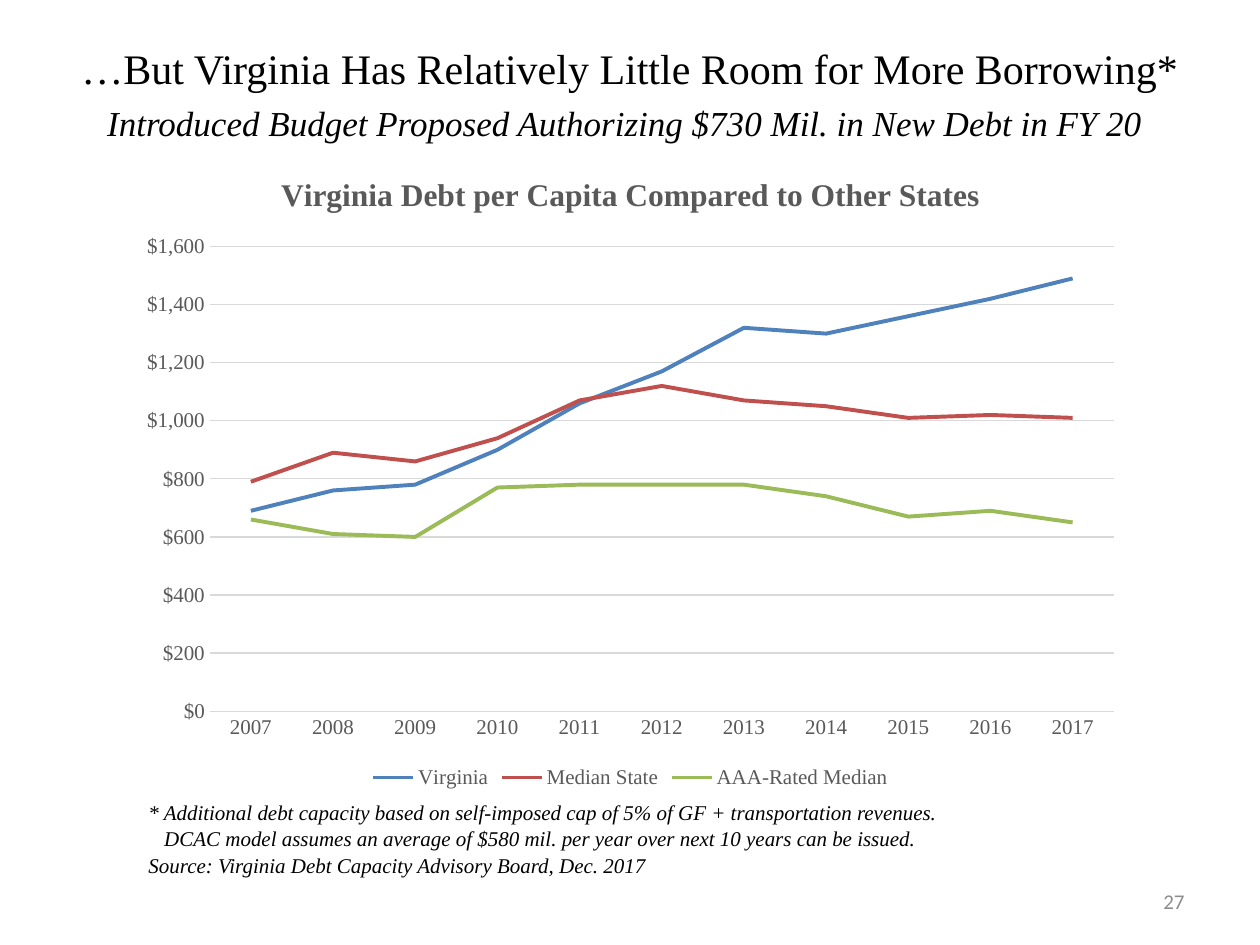
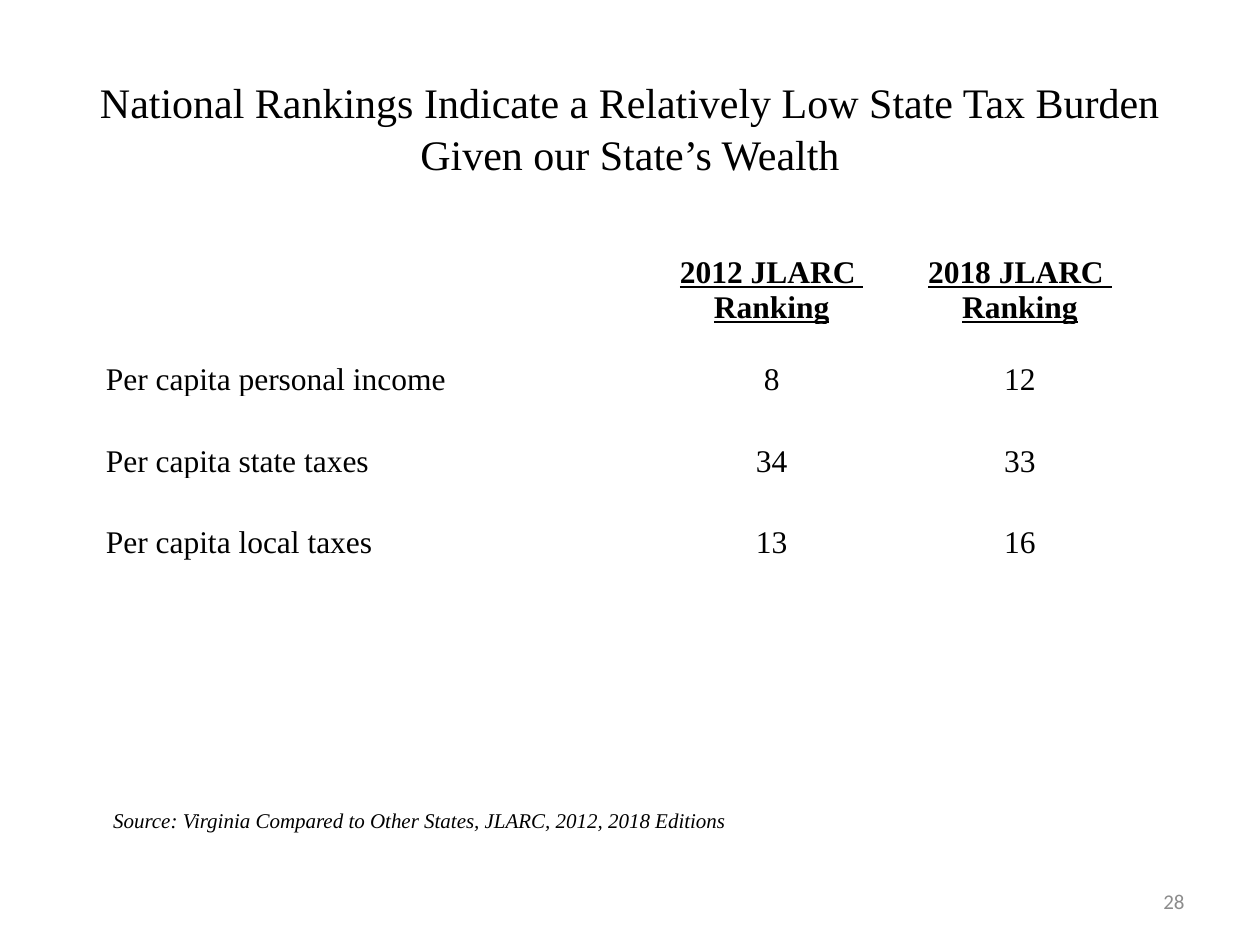
from dataclasses import dataclass
from lxml.etree import SubElement
from pptx import Presentation
from pptx.chart.data import CategoryChartData
from pptx.dml.color import RGBColor
from pptx.enum.chart import XL_CHART_TYPE, XL_LEGEND_POSITION, XL_TICK_MARK
from pptx.enum.text import MSO_ANCHOR, PP_ALIGN
from pptx.oxml.ns import qn
from pptx.util import Inches, Pt


@dataclass(frozen=True)
class Theme:
    serif: str = "Times New Roman"
    sans: str = "Calibri"
    ink: str = "000000"
    chart_ink: str = "595959"
    page_ink: str = "8C8C8C"
    rule: str = "D9D9D9"
    series: tuple = ("4F81BD", "C0504D", "9BBB59")
    title: int = 24
    subtitle: int = 20
    body: int = 18
    small: int = 12
    leading: float = 1.04


COLUMNS, ROWS = 100, 75
PLOT_SHARES = {"x": 0.082, "y": 0.15, "w": 0.898, "h": 0.722}


def apply(target, formats):
    for name, value in formats.items():
        setattr(target, name, value)


class Deck:
    def __init__(self, theme):
        self.theme = theme
        self.deck = Presentation()
        apply(self.deck, {"slide_width": Inches(10), "slide_height": Inches(7.5)})
        self.slide = None

    def across(self, columns):
        return round(self.deck.slide_width * columns / COLUMNS)

    def down(self, rows):
        return round(self.deck.slide_height * rows / ROWS)

    def place(self, left, top, width, height):
        return self.across(left), self.down(top), self.across(width), self.down(height)

    def font(self, font, size, color=None, face=None, **formats):
        base = {"size": Pt(size), "name": face or self.theme.serif}
        apply(font, base | formats)
        font.color.rgb = RGBColor.from_string(color or self.theme.ink)

    def line(self, line, color, width):
        line.color.rgb = RGBColor.from_string(color)
        line.width = Pt(width)

    def new_slide(self, page):
        self.slide = self.deck.slides.add_slide(self.deck.slide_layouts[6])
        number = {"size": self.theme.small, "color": self.theme.page_ink,
                  "face": self.theme.sans}
        self.text((71.7, 69.5, 23.3, 4), [[(page, number)]],
                  PP_ALIGN.RIGHT, MSO_ANCHOR.MIDDLE)

    def text(self, area, paragraphs, align=PP_ALIGN.LEFT, anchor=MSO_ANCHOR.TOP):
        frame = self.slide.shapes.add_textbox(*self.place(*area)).text_frame
        apply(frame, {"word_wrap": True, "vertical_anchor": anchor})
        for index, runs in enumerate(paragraphs):
            paragraph = frame.add_paragraph() if index else frame.paragraphs[0]
            apply(paragraph, {"alignment": align, "line_spacing": self.theme.leading})
            for words, style in runs:
                run = paragraph.add_run()
                run.text = words
                self.font(run.font, **style)
        return frame

    def title(self, area, headline, subtitle=None):
        large = {"size": self.theme.title}
        paragraphs = [[(headline, large)]]
        if subtitle:
            small = {"size": self.theme.subtitle, "italic": True}
            paragraphs.append([(subtitle, small), (" ", large)])
        self.text(area, paragraphs, PP_ALIGN.CENTER)

    def note(self, area, lines, indented=()):
        style = {"size": self.theme.small, "italic": True}
        frame = self.text(area, [[(words, style)] for words in lines])
        for index in indented:
            properties = frame.paragraphs[index]._p.get_or_add_pPr()
            properties.set("marL", str(self.across(1.25)))

    def line_chart(self, area, heading, years, debt):
        data = CategoryChartData(number_format='"$"#,##0')
        data.categories = years
        for name, values in debt.items():
            data.add_series(name, values)
        chart = self.slide.shapes.add_chart(
            XL_CHART_TYPE.LINE, *self.place(*area), data).chart
        label = {"size": self.theme.small, "color": self.theme.chart_ink}
        self.font(chart.font, self.theme.small)
        apply(chart, {"has_title": True, "has_legend": True})
        run = chart.chart_title.text_frame.paragraphs[0].add_run()
        run.text = heading
        self.font(run.font, self.theme.body, self.theme.chart_ink, bold=True)
        apply(chart.legend, {"position": XL_LEGEND_POSITION.BOTTOM,
                             "include_in_layout": False})
        self.font(chart.legend.font, **label)
        for axis in (chart.category_axis, chart.value_axis):
            apply(axis, {"major_tick_mark": XL_TICK_MARK.NONE,
                         "minor_tick_mark": XL_TICK_MARK.NONE})
            self.font(axis.tick_labels.font, **label)
        self.line(chart.category_axis.format.line, self.theme.rule, 0.75)
        dollars = chart.value_axis
        apply(dollars, {"minimum_scale": 0, "maximum_scale": 1600, "major_unit": 200})
        apply(dollars.tick_labels, {"number_format": '"$"#,##0',
                                    "number_format_is_linked": False})
        dollars.format.line.fill.background()
        self.line(dollars.major_gridlines.format.line, self.theme.rule, 0.75)
        chart.plots[0].vary_by_categories = False
        for series, color in zip(chart.plots[0].series, self.theme.series):
            series.smooth = False
            self.line(series.format.line, color, 2.25)
        self.fix_plot(chart)

    def fix_plot(self, chart):
        plot = chart._chartSpace.find(".//" + qn("c:plotArea"))
        for automatic in plot.findall(qn("c:layout")):
            plot.remove(automatic)
        layout = SubElement(plot, qn("c:layout"))
        plot.insert(0, layout)
        manual = SubElement(layout, qn("c:manualLayout"))
        settings = {"layoutTarget": "inner", "xMode": "edge", "yMode": "edge"}
        for name, value in (settings | PLOT_SHARES).items():
            SubElement(manual, qn(f"c:{name}")).set("val", str(value))

    def table(self, area, widths, heights, rows):
        table = self.slide.shapes.add_table(
            len(heights), len(widths), *self.place(*area)).table
        apply(table, {"first_row": False, "horz_banding": False})
        for column, width in zip(table.columns, widths):
            column.width = self.across(width)
        for row, height in zip(table.rows, heights):
            row.height = self.down(height)
        for cell in table.iter_cells():
            cell.fill.background()
            apply(cell, {"vertical_anchor": MSO_ANCHOR.BOTTOM, "margin_bottom": 0,
                         "margin_left": Inches(0.01), "margin_right": Inches(0.01),
                         "margin_top": Inches(0.01)})
        for row_index, row in enumerate(rows):
            emphasis = {"bold": row_index == 0, "underline": row_index == 0}
            for column_index, lines in enumerate(row):
                paragraph = table.cell(row_index, column_index).text_frame.paragraphs[0]
                paragraph.alignment = PP_ALIGN.CENTER if column_index else PP_ALIGN.LEFT
                for line_index, words in enumerate(lines):
                    if line_index:
                        paragraph.add_line_break()
                    run = paragraph.add_run()
                    run.text = words
                    self.font(run.font, self.theme.body, **emphasis)


def debt_slide(deck):
    deck.new_slide("27")
    deck.title((5, 2.7, 90, 7),
               "…But Virginia Has Relatively Little Room for More Borrowing*",
               "Introduced Budget Proposed Authorizing $730 Mil. in New Debt in FY 20")
    deck.note((10.8, 62.9, 82.2, 9.1), [
        "* Additional debt capacity based on self-imposed cap of 5% of GF"
        " + transportation revenues.",
        "DCAC model assumes an average of $580 mil. per year over next 10 years"
        " can be issued.",
        "Source: Virginia Debt Capacity Advisory Board, Dec. 2017"], indented=[1])
    deck.line_chart(
        (10.1, 11.9, 79.9, 51.1),
        "Virginia Debt per Capita Compared to Other States",
        [str(year) for year in range(2007, 2018)],
        {"Virginia": [690, 760, 780, 900, 1060, 1170, 1320, 1300, 1360, 1420, 1490],
         "Median State": [790, 890, 860, 940, 1070, 1120, 1070, 1050, 1010, 1020, 1010],
         "AAA-Rated Median": [660, 610, 600, 770, 780, 780, 780, 740, 670, 690, 650]})


def rankings_slide(deck):
    deck.new_slide("28")
    deck.title((5, 5.4, 90, 12.5),
               "National Rankings Indicate a Relatively Low State Tax Burden"
               " Given our State’s Wealth")
    deck.note((8, 63.5, 54.7, 6.1),
              ["Source: Virginia Compared to Other States, JLARC, 2012, 2018 Editions"])
    rankings = {"Per capita personal income": ("8", "12"),
                "Per capita state taxes": ("34", "33"),
                "Per capita local taxes": ("13", "16")}
    header = [[]] + [[f"{year} JLARC ", "Ranking"] for year in (2012, 2018)]
    body = [[[measure], *([rank] for rank in ranks)]
            for measure, ranks in rankings.items()]
    deck.table((8.3, 19.2, 82.5, 45), (43.1, 19.7, 19.7),
               (6.6, 5.7, 6.5, 6.5, 6.7, 6.4, 6.5), [header] + body)


def main():
    deck = Deck(Theme())
    debt_slide(deck)
    rankings_slide(deck)
    deck.deck.save("out.pptx")


if __name__ == "__main__":
    main()
